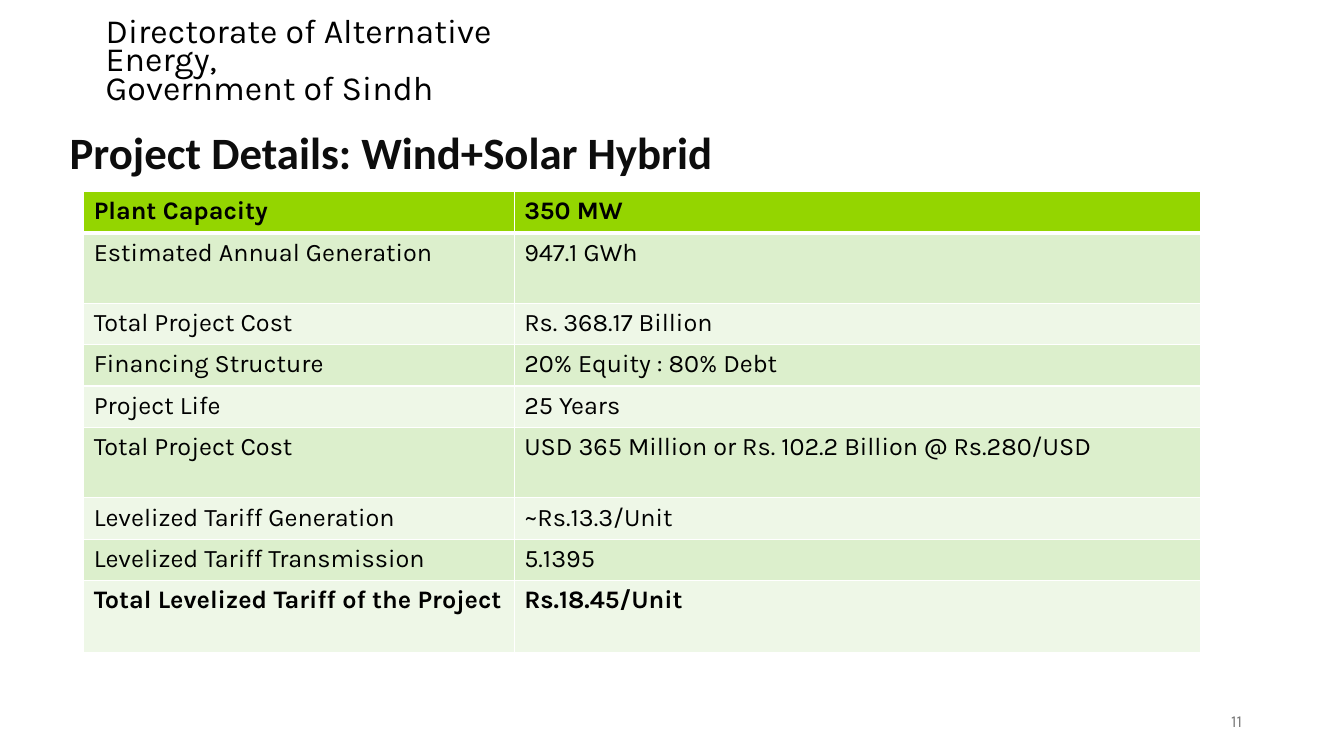
"""Build the project details slide for the wind and solar hybrid plant."""
from dataclasses import dataclass

from lxml.etree import SubElement
from pptx import Presentation
from pptx.dml.color import RGBColor
from pptx.enum.text import MSO_ANCHOR, PP_ALIGN
from pptx.oxml.ns import qn
from pptx.slide import Slide
from pptx.table import _Cell
from pptx.text.text import TextFrame
from pptx.util import Inches, Pt

BLACK = RGBColor(0x00, 0x00, 0x00)
INK = RGBColor(0x0D, 0x0D, 0x0D)
GRAY = RGBColor(0x79, 0x79, 0x79)
WHITE = RGBColor(0xFF, 0xFF, 0xFF)
LIME = RGBColor(0x94, 0xD5, 0x00)
BANDS = (RGBColor(0xEE, 0xF7, 0xE7), RGBColor(0xDC, 0xEF, 0xCC))


@dataclass
class Row:
    label: str
    value: str
    height: float = 0.41
    bold: bool = False
    align: PP_ALIGN = PP_ALIGN.JUSTIFY


ROWS = [
    Row("Plant Capacity", "350 MW", bold=True, align=PP_ALIGN.LEFT),
    Row("Estimated Annual Generation", "947.1 GWh", 0.7, align=PP_ALIGN.LEFT),
    Row("Total Project Cost", "Rs. 368.17 Billion", align=PP_ALIGN.LEFT),
    Row("Financing Structure", "20% Equity : 80% Debt"),
    Row("Project Life", "25 Years"),
    Row("Total Project Cost", "USD 365 Million or Rs. 102.2 Billion @ Rs.280/USD", 0.7),
    Row("Levelized Tariff Generation", "~Rs.13.3/Unit"),
    Row("Levelized Tariff Transmission", "5.1395"),
    Row("Total Levelized Tariff of the Project", "Rs.18.45/Unit", 0.72, bold=True),
]
WIDTHS = (4.27, 6.81)


def write(frame: TextFrame, text: str, *, size: float = 18, font: str = "Karla",
          color: RGBColor = BLACK, bold: bool = False,
          align: PP_ALIGN = PP_ALIGN.LEFT, space: float = 1.0,
          anchor: MSO_ANCHOR = MSO_ANCHOR.MIDDLE) -> None:
    frame.text = text
    frame.word_wrap = True
    frame.vertical_anchor = anchor
    for para in frame.paragraphs:
        para.alignment = align
        para.line_spacing = space
        para.space_before = Pt(0)
        for run in para.runs:
            run.font.name = font
            run.font.size = Pt(size)
            run.font.bold = bold
            run.font.color.rgb = color


def add_text(slide: Slide, text: str, left: float, top: float,
             width: float, height: float, **style) -> None:
    box = slide.shapes.add_textbox(Inches(left), Inches(top), Inches(width), Inches(height))
    write(box.text_frame, text, **style)


def add_edges(cell: _Cell, top: float, base: float) -> None:
    props = cell._tc.get_or_add_tcPr()
    for side, width in (("L", 1), ("R", 1), ("T", top), ("B", base)):
        line = SubElement(props, qn(f"a:ln{side}"), w=str(Pt(width)))
        fill = SubElement(line, qn("a:solidFill"))
        SubElement(fill, qn("a:srgbClr"), val=str(WHITE))


def add_grid(slide: Slide) -> None:
    total = sum(row.height for row in ROWS)
    frame = slide.shapes.add_table(len(ROWS), len(WIDTHS), Inches(0.83), Inches(1.9),
                                   Inches(sum(WIDTHS)), Inches(total))
    grid = frame.table
    for column, width in zip(grid.columns, WIDTHS):
        column.width = Inches(width)
    for index, row in enumerate(ROWS):
        grid.rows[index].height = Inches(row.height)
        pairs = ((row.label, PP_ALIGN.LEFT), (row.value, row.align))
        for place, (text, align) in enumerate(pairs):
            cell = grid.cell(index, place)
            add_edges(cell, 3 if index == 1 else 1, 3 if index == 0 else 1)
            cell.fill.solid()
            cell.fill.fore_color.rgb = BANDS[index % 2] if index else LIME
            cell.vertical_anchor = MSO_ANCHOR.TOP
            write(cell.text_frame, text, bold=row.bold, align=align, anchor=MSO_ANCHOR.TOP)


def main() -> None:
    deck = Presentation()
    deck.slide_width, deck.slide_height = Inches(13.33), Inches(7.5)
    slide = deck.slides.add_slide(deck.slide_layouts[5])
    add_text(slide, "Directorate of Alternative Energy,\nGovernment of Sindh",
             0.95, 0.24, 4.64, 0.77, size=24.2, space=0.7)
    add_text(slide, "11", 9.42, 6.95, 3, 0.4, size=12, color=GRAY, align=PP_ALIGN.RIGHT)
    add_grid(slide)
    title = slide.shapes.title
    title.left, title.top = Inches(0.59), Inches(1.2)
    title.width, title.height = Inches(8.25), Inches(0.67)
    write(title.text_frame, "Project Details: Wind+Solar Hybrid", size=32,
          font="Calibri", color=INK, bold=True, space=0.9)
    deck.save("out.pptx")


if __name__ == "__main__":
    main()
